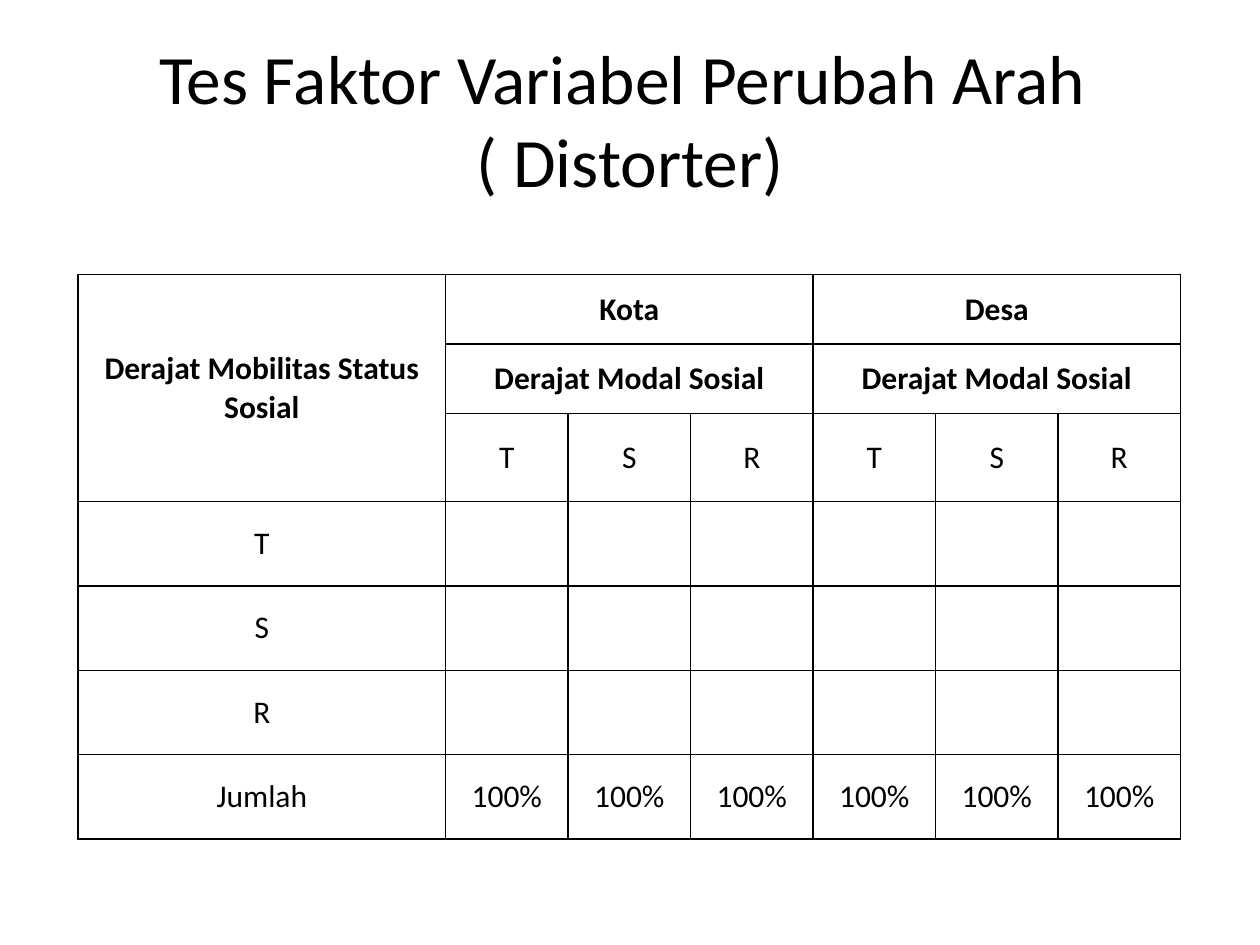
"""Build the slide with the distorter-variable cross table."""
from dataclasses import dataclass

from lxml.etree import SubElement
from pptx import Presentation
from pptx.dml.color import RGBColor
from pptx.enum.text import MSO_ANCHOR, PP_ALIGN
from pptx.oxml.ns import qn
from pptx.slide import Slide
from pptx.table import Table, _Cell
from pptx.text.text import TextFrame
from pptx.util import Inches, Pt

BLACK = RGBColor(0, 0, 0)
SLIDE_WIDTH, SLIDE_HEIGHT = Inches(10), Inches(7.5)
TITLE_SHARES = (0.05, 0.04, 0.9, 0.17)
TABLE_LEFT, TABLE_TOP = Inches(0.62), Inches(2.18)
UNIT = Inches(8.75) // 9
COLUMN_UNITS = [3] + [1] * 6
ROW_HEIGHTS = [0.55] * 2 + [0.7] + [0.67] * 4
LEVELS = ("T", "S", "R")
BASE_FONT = {"name": "Calibri", "bold": False}


@dataclass(frozen=True)
class Entry:
    """A table entry placed by row and column, with its span."""

    row: int
    column: int
    wording: str
    rows: int = 1
    columns: int = 1
    bold: bool = False


def write(frame: TextFrame, wording: str, **font_values) -> None:
    """Write centred text with the given font values."""
    frame.text = wording
    for paragraph in frame.paragraphs:
        paragraph.alignment = PP_ALIGN.CENTER
        for target in [paragraph.font] + [run.font for run in paragraph.runs]:
            for attribute, value in {**BASE_FONT, **font_values}.items():
                setattr(target, attribute, value)
            target.color.rgb = BLACK


def add_title(slide: Slide, wording: str) -> None:
    """Add the heading at its share of the slide."""
    left, top, width, height = TITLE_SHARES
    heading = slide.shapes.add_textbox(
        int(left * SLIDE_WIDTH), int(top * SLIDE_HEIGHT),
        int(width * SLIDE_WIDTH), int(height * SLIDE_HEIGHT),
    ).text_frame
    for attribute, value in {"word_wrap": True, "vertical_anchor": MSO_ANCHOR.MIDDLE}.items():
        setattr(heading, attribute, value)
    write(heading, wording, size=Pt(39.6))


def rule_cell(cell: _Cell) -> None:
    """Give a cell black borders and no fill."""
    properties = cell._tc.get_or_add_tcPr()
    for side in ("lnL", "lnR", "lnT", "lnB"):
        border = SubElement(properties, qn(f"a:{side}"), w=str(Pt(1)))
        SubElement(SubElement(border, qn("a:solidFill")), qn("a:srgbClr"), val=str(BLACK))
    cell.fill.background()
    cell.vertical_anchor = MSO_ANCHOR.MIDDLE


def add_grid(slide: Slide) -> Table:
    """Add the empty ruled table."""
    heights = [Inches(height) for height in ROW_HEIGHTS]
    grid = slide.shapes.add_table(
        len(heights), len(COLUMN_UNITS), TABLE_LEFT, TABLE_TOP,
        UNIT * sum(COLUMN_UNITS), sum(heights),
    ).table
    for attribute in ("first_row", "horz_banding"):
        setattr(grid, attribute, False)
    for column, units in zip(grid.columns, COLUMN_UNITS):
        column.width = UNIT * units
    for row, height in zip(grid.rows, heights):
        row.height = height
    for cell in grid.iter_cells():
        rule_cell(cell)
    return grid


def fill_entry(grid: Table, entry: Entry) -> None:
    """Merge an entry's span and write its wording."""
    cell = grid.cell(entry.row, entry.column)
    if entry.rows * entry.columns > 1:
        cell.merge(grid.cell(entry.row + entry.rows - 1, entry.column + entry.columns - 1))
    write(cell.text_frame, entry.wording, size=Pt(18), bold=entry.bold)


def table_entries() -> list[Entry]:
    """List the headings, levels and totals."""
    entries = [Entry(0, 0, "Derajat Mobilitas Status Sosial", rows=3, bold=True)]
    for area, start in (("Kota", 1), ("Desa", 4)):
        for row, wording in enumerate((area, "Derajat Modal Sosial")):
            entries.append(Entry(row, start, wording, columns=3, bold=True))
        for offset, level in enumerate(LEVELS):
            entries.append(Entry(2, start + offset, level))
            entries.append(Entry(6, start + offset, "100%"))
    for row, wording in enumerate((*LEVELS, "Jumlah"), start=3):
        entries.append(Entry(row, 0, wording))
    return entries


def main() -> None:
    """Build and save the presentation."""
    deck = Presentation()
    deck.slide_width, deck.slide_height = SLIDE_WIDTH, SLIDE_HEIGHT
    slide = deck.slides.add_slide(deck.slide_layouts[6])
    add_title(slide, "Tes Faktor Variabel Perubah Arah \v( Distorter)")
    grid = add_grid(slide)
    for entry in table_entries():
        fill_entry(grid, entry)
    deck.save("out.pptx")


if __name__ == "__main__":
    main()
